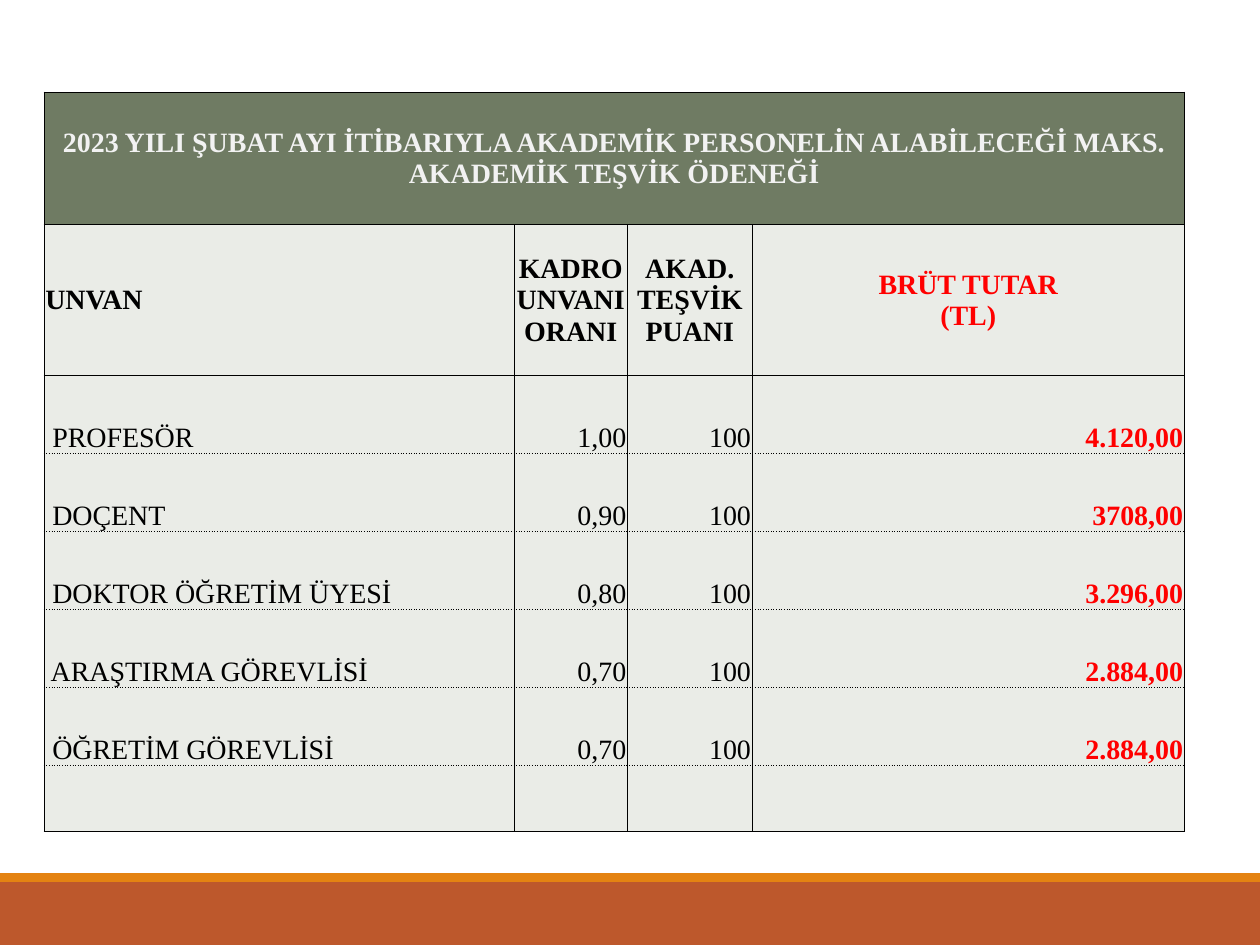
from lxml.etree import SubElement
from pptx import Presentation
from pptx.dml.color import RGBColor
from pptx.enum.shapes import MSO_SHAPE
from pptx.enum.text import MSO_ANCHOR, PP_ALIGN
from pptx.oxml.ns import qn
from pptx.util import Inches, Pt


def paint(fill, color):
    fill.solid()
    fill.fore_color.rgb = RGBColor.from_string(color)


def edge(cell, side, dash):
    line = SubElement(cell._tc.get_or_add_tcPr(), qn("a:ln" + side), w=str(Pt(0.5)))
    solid = SubElement(line, qn("a:solidFill"))
    SubElement(solid, qn("a:srgbClr"), val="000000")
    SubElement(line, qn("a:prstDash"), val=dash)


deck = Presentation()
deck.slide_width, deck.slide_height = Inches(10), Inches(7.5)
slide = deck.slides.add_slide(deck.slide_layouts[6])

# Bottom bars
for top, high, color in [(7, 0.5, "BD582C"), (6.93, 0.07, "E48312")]:
    bar = slide.shapes.add_shape(
        MSO_SHAPE.RECTANGLE, 0, Inches(top), Inches(10), Inches(high))
    bar.shadow.inherit = False
    paint(bar.fill, color)
    bar.line.fill.background()

# Table content
rows = [
    ["2023 YILI ŞUBAT AYI İTİBARIYLA AKADEMİK PERSONELİN ALABİLECEĞİ MAKS. "
     "AKADEMİK TEŞVİK ÖDENEĞİ", "", "", ""],
    ["UNVAN", "KADRO UNVANI ORANI", "AKAD. TEŞVİK PUANI", "BRÜT TUTAR\n(TL)"],
    [" PROFESÖR", "1,00", "100", "4.120,00"],
    [" DOÇENT", "0,90", "100", "3708,00"],
    [" DOKTOR ÖĞRETİM ÜYESİ", "0,80", "100", "3.296,00"],
    [" ARAŞTIRMA GÖREVLİSİ", "0,70", "100", "2.884,00"],
    [" ÖĞRETİM GÖREVLİSİ", "0,70", "100", "2.884,00"],
    ["", "", "", ""],
]
wide = [3.73, 0.9, 0.99, 3.43]
high = [1.05, 1.2] + [0.62] * 5 + [0.52]
last = len(rows) - 1

# Table grid
table = slide.shapes.add_table(
    len(rows), len(wide), Inches(0.35), Inches(0.73),
    Inches(sum(wide)), Inches(sum(high))).table
for col, size in zip(table.columns, wide):
    col.width = Inches(size)
for row, size in zip(table.rows, high):
    row.height = Inches(size)
table.cell(0, 0).merge(table.cell(0, 3))

# Table cells
for r, texts in enumerate(rows):
    for c, text in enumerate(texts):
        cell = table.cell(r, c)
        head = r < 2
        form = {
            "margin_left": Inches(0.01), "margin_right": Inches(0.01),
            "margin_top": Inches(0.01), "margin_bottom": 0,
            "vertical_anchor": MSO_ANCHOR.MIDDLE if head else MSO_ANCHOR.BOTTOM,
        }
        for name, value in form.items():
            setattr(cell, name, value)

        # Dotted rules between the body rows
        for side in "LRTB":
            dots = (side == "T" and r > 2) or (side == "B" and 1 < r < last)
            edge(cell, side, "dot" if dots else "solid")
        paint(cell.fill, "EAECE7" if r else "6F7B63")

        para = cell.text_frame.paragraphs[0]
        if r and c == 0:
            para.alignment = PP_ALIGN.LEFT
        else:
            para.alignment = PP_ALIGN.CENTER if head else PP_ALIGN.RIGHT
        if text:
            para.text = text
        font = {"name": "Times New Roman", "size": Pt(16), "bold": head or c == 3}
        for name, value in font.items():
            setattr(para.font, name, value)
            for run in para.runs:
                setattr(run.font, name, value)
        color = "F2F2F2" if r == 0 else "FF0000" if c == 3 else "000000"
        for run in para.runs:
            paint(run.font.fill, color)

deck.save("out.pptx")
